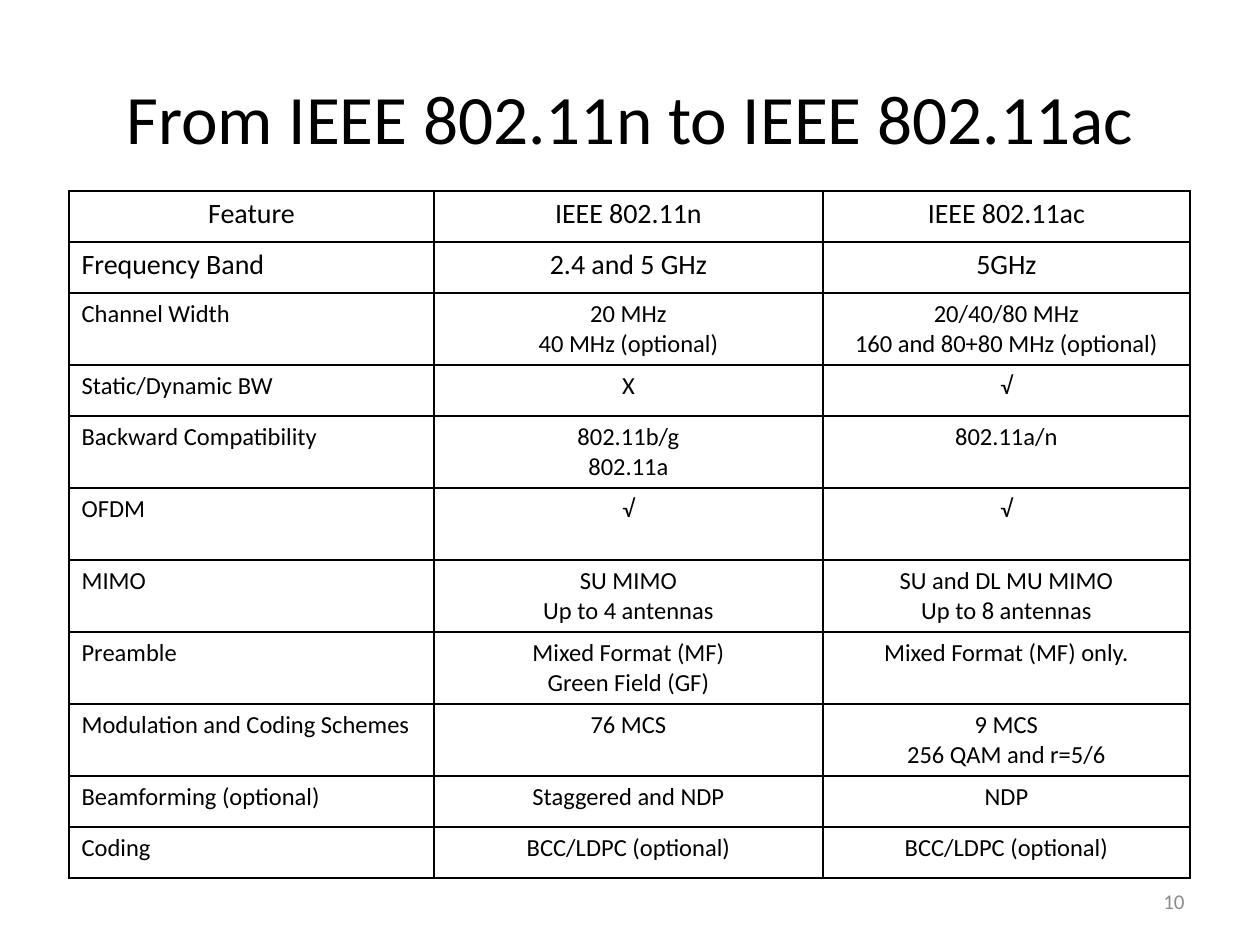
import pptx
import pptx.util
import pptx.dml.color
import pptx.enum.text
import pptx.oxml
import pptx.oxml.ns

TITLE = "From IEEE 802.11n to IEEE 802.11ac"
PAGE_NUMBER = "10"
FEATURES = [
    ("Feature", "IEEE 802.11n", "IEEE 802.11ac"),
    ("Frequency Band", "2.4 and 5 GHz", "5GHz"),
    ("Channel Width", "20 MHz\n40 MHz (optional)",
     "20/40/80 MHz\n160 and 80+80 MHz (optional)"),
    ("Static/Dynamic BW", "X", "√"),
    ("Backward Compatibility", "802.11b/g\n802.11a", "802.11a/n"),
    ("OFDM", "√", "√"),
    ("MIMO", "SU MIMO\nUp to 4 antennas", "SU and DL MU MIMO\nUp to 8 antennas"),
    ("Preamble", "Mixed Format (MF)\nGreen Field (GF)", "Mixed Format (MF) only."),
    ("Modulation and Coding Schemes", "76 MCS", "9 MCS\n256 QAM and r=5/6"),
    ("Beamforming (optional)", "Staggered and NDP", "NDP"),
    ("Coding", "BCC/LDPC (optional)", "BCC/LDPC (optional)"),
]
TALL_FEATURES = {"OFDM"}  # given two-line height despite single-line text
LARGE_ROWS = 2
COLUMN_WIDTHS = [365, 389, 367]
SHORT_ROW, TALL_ROW = 51, 72
TABLE_LEFT, TABLE_TOP = 69, 191
COLORS = {"text": "000000", "border": "000000", "number": "8C8C8C"}
FONT = "Calibri"
ALIGN = pptx.enum.text.PP_ALIGN
MIDDLE = pptx.enum.text.MSO_ANCHOR.MIDDLE


def px(length):
    return pptx.util.Emu(round(length * 914400 / 126))


def place(shape, left, top, width, height):
    shape.left, shape.top = px(left), px(top)
    shape.width, shape.height = px(width), px(height)


def write(frame, text, size, align, color="text"):
    frame.text = text
    frame.word_wrap = True
    for paragraph in frame.paragraphs:
        paragraph.alignment = align
        paragraph.font.name = FONT
        paragraph.font.size = pptx.util.Pt(size)
        paragraph.font.bold = False
        paragraph.font.color.rgb = pptx.dml.color.RGBColor.from_string(COLORS[color])


def add_borders(cell):
    properties = cell._tc.get_or_add_tcPr()
    for side in ("lnL", "lnR", "lnT", "lnB"):
        properties.append(pptx.oxml.parse_xml(
            f'<a:{side} {pptx.oxml.ns.nsdecls("a")} w="{pptx.util.Pt(1)}">'
            f'<a:solidFill><a:srgbClr val="{COLORS["border"]}"/></a:solidFill></a:{side}>'))


deck = pptx.Presentation()
deck.slide_width, deck.slide_height = px(1260), px(945)
slide = deck.slides.add_slide(deck.slide_layouts[5])

# Title
title = slide.shapes.title
place(title, 63, 38, 1134, 158)
write(title.text_frame, TITLE, 39.6, ALIGN.CENTER)
title.text_frame.vertical_anchor = MIDDLE

# Page number
page_number = slide.shapes.add_textbox(px(903), px(876), px(294), px(50))
write(page_number.text_frame, PAGE_NUMBER, 12, ALIGN.RIGHT, "number")
page_number.text_frame.vertical_anchor = MIDDLE

# Feature comparison
row_heights = [TALL_ROW if row[0] in TALL_FEATURES or "\n" in "".join(row) else SHORT_ROW
               for row in FEATURES]
comparison = slide.shapes.add_table(
    len(FEATURES), len(COLUMN_WIDTHS), px(TABLE_LEFT), px(TABLE_TOP),
    px(sum(COLUMN_WIDTHS)), px(sum(row_heights))).table
comparison.first_row = comparison.horz_banding = False
for column, width in zip(comparison.columns, COLUMN_WIDTHS):
    column.width = px(width)
for r, (texts, height) in enumerate(zip(FEATURES, row_heights)):
    comparison.rows[r].height = px(height)
    for c, text in enumerate(texts):
        cell = comparison.cell(r, c)
        align = ALIGN.LEFT if c == 0 and r > 0 else ALIGN.CENTER
        write(cell.text_frame, text, 16 if r < LARGE_ROWS else 14, align)
        add_borders(cell)
        cell.fill.background()

deck.save("out.pptx")
